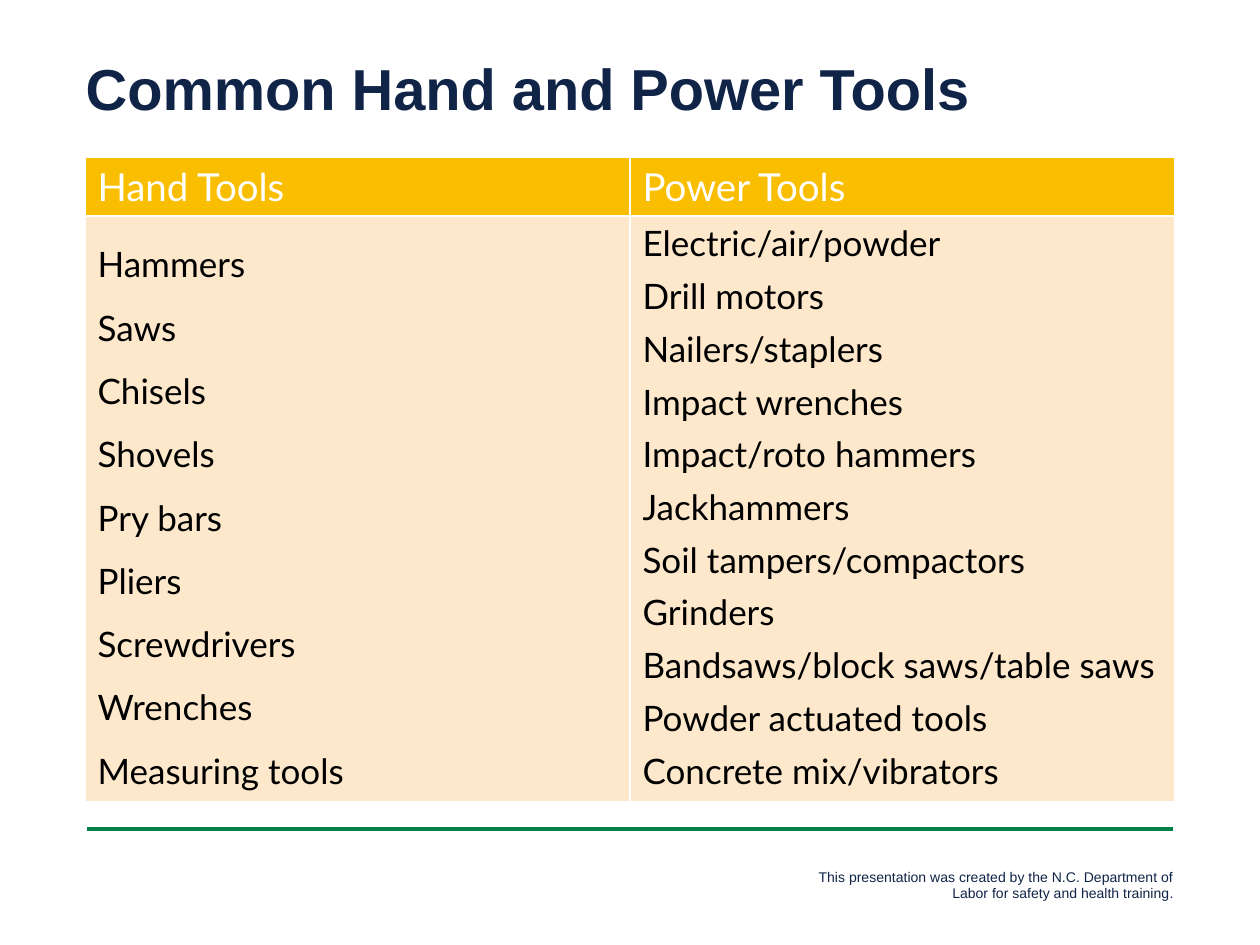
from lxml import etree
from pptx import Presentation
from pptx import util as u
from pptx.dml.color import RGBColor
from pptx.enum import shapes, text
from pptx.oxml import ns

TITLE = "Common Hand and Power Tools"
COLUMNS = [
    ("Hand Tools",
     ["Hammers", "Saws", "Chisels", "Shovels", "Pry bars", "Pliers",
      "Screwdrivers", "Wrenches", "Measuring tools"],
     {"line_spacing": 1.5}),
    ("Power Tools",
     ["Electric/air/powder", "Drill motors", "Nailers/staplers",
      "Impact wrenches", "Impact/roto hammers", "Jackhammers",
      "Soil tampers/compactors", "Grinders",
      "Bandsaws/block saws/table saws", "Powder actuated tools",
      "Concrete mix/vibrators"],
     {"space_after": u.Pt(6)}),
]
CREDIT = [
    ("This presentation was created by the N.C. Department of Labor "
     "for safety and health training", "navy"),
    (".", "purple"),
]
COLORS = {"navy": "102447", "purple": "2B0E62", "green": "00814A",
          "gold": "FABE00", "cream": "FDE8CC", "white": "FFFFFF",
          "black": "000000"}
ROW_HEIGHTS = [58, 586]
COLUMN_WIDTH = 545


def px(n):
    return round(n * 914400 / 126)


def rgb(name):
    return RGBColor.from_string(COLORS[name])


def set_font(font, face, size, color=None, bold=False):
    font.name, font.size, font.bold = face, u.Pt(size), bold
    if color:
        font.color.rgb = rgb(color)


def set_borders(cell, color, bottom):
    widths = {"lnL": 1, "lnR": 1, "lnT": 1, "lnB": bottom}
    for i, (side, width) in enumerate(widths.items()):
        border = etree.Element(ns.qn("a:" + side), w=str(u.Pt(width)))
        fill = etree.SubElement(border, ns.qn("a:solidFill"))
        etree.SubElement(fill, ns.qn("a:srgbClr"), val=COLORS[color])
        cell._tc.get_or_add_tcPr().insert(i, border)


def fill_cell(cell, lines, size, color, background, spacing, bottom=1):
    cell.fill.solid()
    cell.fill.fore_color.rgb = rgb(background)
    set_borders(cell, "white", bottom)
    cell.text_frame.text = "\n".join(lines)
    for paragraph in cell.text_frame.paragraphs:
        set_font(paragraph.font, "Lato", size, color)
        for key, value in spacing.items():
            setattr(paragraph, key, value)


def add_title(slide):
    title = slide.shapes.title
    title.left, title.top, title.width, title.height = map(px, (73, 53, 1113, 77))
    title.text_frame.text = TITLE
    title.text_frame.vertical_anchor = text.MSO_ANCHOR.MIDDLE
    heading = title.text_frame.paragraphs[0]
    heading.alignment = text.PP_ALIGN.LEFT
    heading.line_spacing = 0.9
    set_font(heading.font, "Arial", 33, "navy", True)


def add_tools(slide):
    tools = slide.shapes.add_table(
        2, len(COLUMNS), px(85), px(157),
        px(COLUMN_WIDTH * len(COLUMNS)), px(sum(ROW_HEIGHTS))).table
    for row, height in zip(tools.rows, ROW_HEIGHTS):
        row.height = px(height)
    for i, (heading, names, spacing) in enumerate(COLUMNS):
        tools.columns[i].width = px(COLUMN_WIDTH)
        fill_cell(tools.cell(0, i), [heading], 22, "white", "gold", {}, 1)
        fill_cell(tools.cell(1, i), names, 20, "black", "cream", spacing)


def add_footer(slide):
    rule = slide.shapes.add_connector(
        shapes.MSO_CONNECTOR.STRAIGHT, px(87), px(829), px(1173), px(829))
    rule.line.color.rgb = rgb("green")
    rule.line.width = u.Pt(2)
    etree.SubElement(rule._element.spPr, ns.qn("a:effectLst"))

    credit = slide.shapes.add_textbox(*map(px, (776, 862, 410, 47)))
    credit.text_frame.word_wrap = True
    paragraph = credit.text_frame.paragraphs[0]
    paragraph.alignment = text.PP_ALIGN.RIGHT
    set_font(paragraph.font, "Arial", 8)
    for words, color in CREDIT:
        run = paragraph.add_run()
        run.text = words
        run.font.color.rgb = rgb(color)


def main():
    deck = Presentation()
    deck.slide_width, deck.slide_height = px(1260), px(945)
    slide = deck.slides.add_slide(deck.slide_layouts[5])
    add_footer(slide)
    add_tools(slide)
    add_title(slide)
    deck.save("out.pptx")


if __name__ == "__main__":
    main()
